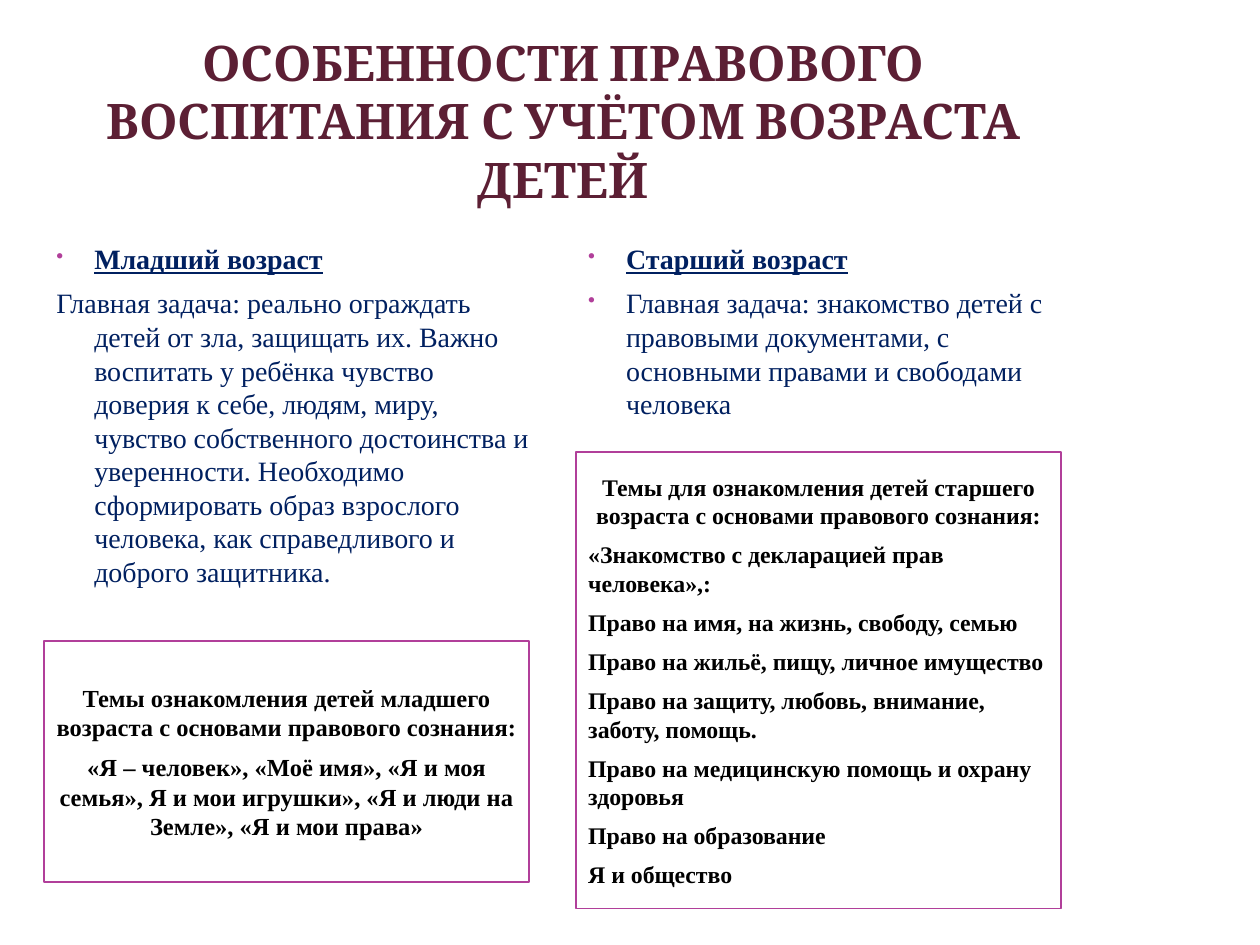
from lxml.etree import SubElement
from pptx import Presentation
from pptx.dml.color import RGBColor
from pptx.enum.shapes import MSO_SHAPE
from pptx.enum.text import MSO_ANCHOR, PP_ALIGN
from pptx.oxml.ns import qn
from pptx.util import Inches, Pt

PLUM = RGBColor(0x5C, 0x1F, 0x34)
PINK = RGBColor(0xB1, 0x3F, 0x9A)
NAVY = RGBColor(0x00, 0x20, 0x60)
BLACK = RGBColor(0, 0, 0)
SERIF = "Times New Roman"
LEFT, RIGHT, WIDTH = 0.35, 4.57, 3.85

TITLE = "ОСОБЕННОСТИ ПРАВОВОГО ВОСПИТАНИЯ С УЧЁТОМ ВОЗРАСТА ДЕТЕЙ"
YOUNG = [
    "Младший возраст",
    "Главная задача: реально ограждать детей от зла, защищать их. Важно "
    "воспитать у ребёнка чувство доверия к себе, людям, миру, чувство "
    "собственного достоинства и уверенности. Необходимо сформировать образ "
    "взрослого человека, как справедливого и доброго защитника.",
]
OLDER = [
    "Старший возраст",
    "Главная задача: знакомство детей с правовыми документами, с основными "
    "правами и свободами человека",
]
YOUNG_TOPICS = [
    "Темы ознакомления детей младшего возраста с основами правового сознания:",
    "«Я – человек», «Моё имя», «Я и моя семья», Я и мои игрушки», "
    "«Я и люди на Земле», «Я и мои права»",
]
OLDER_TOPICS = [
    "Темы для ознакомления детей старшего возраста с основами правового сознания:",
    "«Знакомство с декларацией прав человека»,:",
    "Право на имя, на жизнь, свободу, семью",
    "Право на жильё, пищу, личное имущество",
    "Право на защиту, любовь, внимание, заботу, помощь.",
    "Право на медицинскую помощь и охрану здоровья",
    "Право на образование",
    "Я и общество",
]


def style(para, size, color, bold=True, face=SERIF):
    """Format every run of a paragraph."""
    for run in para.runs:
        font = run.font
        font.name, font.size, font.bold = face, Pt(size), bold
        font.color.rgb = color


def fill_text(frame, lines):
    """Write one paragraph per line, spaced evenly, and return them."""
    frame.word_wrap = True
    frame.text = "\n".join(lines)
    for para in frame.paragraphs[1:]:
        para.space_before = Pt(6)
    return frame.paragraphs


def hang(para, bullet):
    """Give a paragraph a hanging indent and, if wanted, a bullet."""
    props = para._p.get_or_add_pPr()
    props.set("marL", str(Inches(0.3)))
    props.set("indent", str(-Inches(0.3)))
    if bullet:
        color = SubElement(props, qn("a:buClr"))
        SubElement(color, qn("a:srgbClr"), val=str(PINK))
        SubElement(props, qn("a:buSzPct"), val="73000")
        SubElement(props, qn("a:buChar"), char="•")


def add_title(slide):
    """Add the centred heading."""
    box = slide.shapes.add_textbox(Inches(0.51), Inches(0.13), Inches(7.92), Inches(1.65))
    frame = box.text_frame
    frame.vertical_anchor = MSO_ANCHOR.MIDDLE
    frame.margin_left = frame.margin_right = Inches(0.05)
    frame.margin_top = frame.margin_bottom = 0
    para = fill_text(frame, [TITLE])[0]
    para.alignment = PP_ALIGN.CENTER
    style(para, 28, PLUM, face="Cambria")


def add_task(slide, left, width, height, lines, bullets):
    """Add an age group's underlined heading and its main task."""
    box = slide.shapes.add_textbox(Inches(left), Inches(1.87), Inches(width), Inches(height))
    head, task = fill_text(box.text_frame, lines)
    hang(head, True)
    hang(task, bullets)
    style(head, 16, NAVY)
    style(task, 16, NAVY, bold=False)
    head.runs[0].font.underline = True


def add_topics(slide, left, top, height, lines, size, centred):
    """Add a framed list of topics with its first paragraphs centred."""
    box = slide.shapes.add_shape(
        MSO_SHAPE.RECTANGLE, Inches(left), Inches(top), Inches(WIDTH), Inches(height))
    box.shadow.inherit = False
    box.fill.background()
    box.line.color.rgb = PINK
    box.line.width = Pt(1)
    box.text_frame.vertical_anchor = MSO_ANCHOR.MIDDLE
    for index, para in enumerate(fill_text(box.text_frame, lines)):
        para.alignment = PP_ALIGN.CENTER if index < centred else PP_ALIGN.LEFT
        style(para, size, BLACK)


def main():
    """Build the slide and save it."""
    deck = Presentation()
    deck.slide_width, deck.slide_height = Inches(10), Inches(7.5)
    slide = deck.slides.add_slide(deck.slide_layouts[6])
    add_title(slide)
    add_topics(slide, LEFT, 5.09, 1.91, YOUNG_TOPICS, 14, 2)
    add_topics(slide, RIGHT, 3.59, 3.62, OLDER_TOPICS, 13.6, 1)
    add_task(slide, LEFT, 4, 2.98, YOUNG, False)
    add_task(slide, RIGHT, WIDTH, 1.8, OLDER, True)
    deck.save("out.pptx")


if __name__ == "__main__":
    main()
